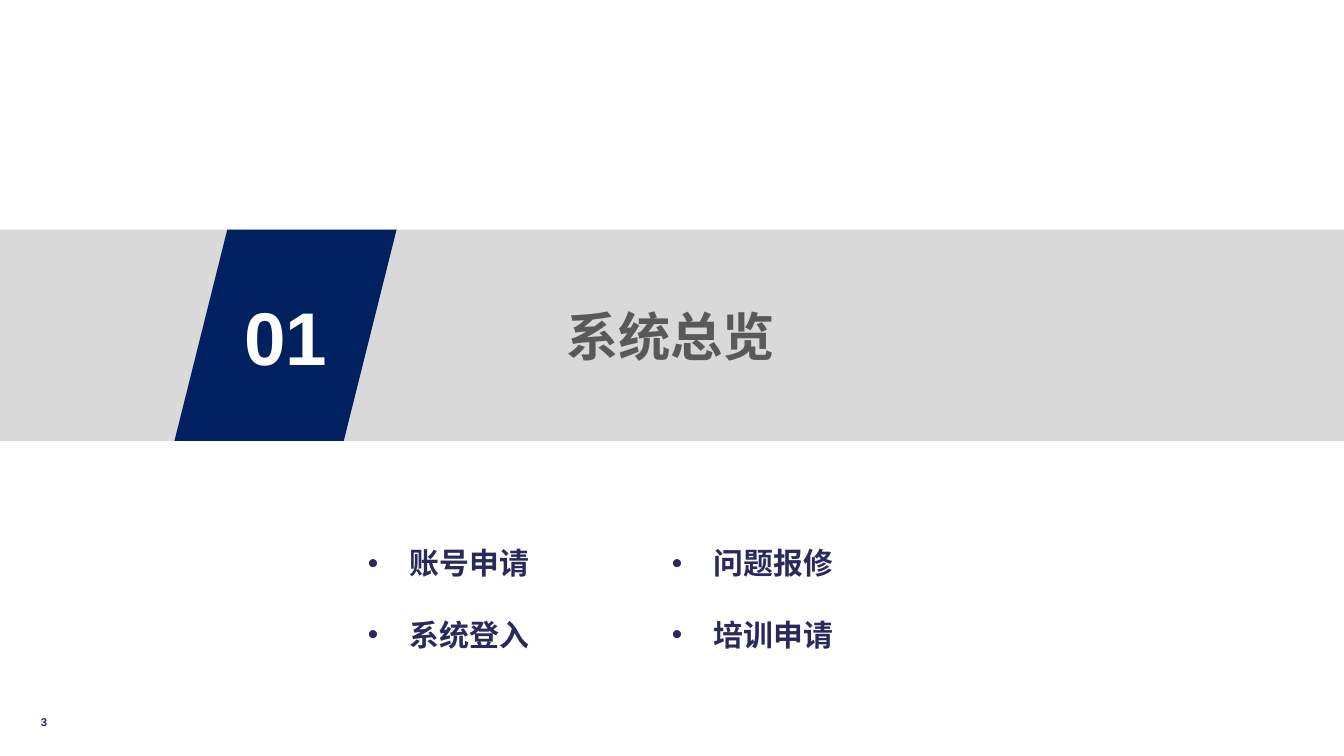
from lxml import etree
from pptx import Presentation
from pptx.dml.color import RGBColor
from pptx.enum import shapes, text
from pptx.oxml import ns
from pptx.util import Pt

NAVY, INK, GREY, BAND, WHITE = "002060", "2A295C", "595959", "D9D9D9", "FFFFFF"
MID, LOW = text.MSO_ANCHOR.MIDDLE, text.MSO_ANCHOR.BOTTOM
CENTER, RIGHT = text.PP_ALIGN.CENTER, text.PP_ALIGN.RIGHT


def tint(color, value):
    """Set a colour format from a hex string."""
    color.rgb = RGBColor.from_string(value)


def place(shape, x, y, w, h):
    """Put a shape at a box given in points."""
    shape.left, shape.top, shape.width, shape.height = map(Pt, (x, y, w, h))


def paint(shape, value):
    """Fill a shape without outline or shadow."""
    shape.fill.solid()
    tint(shape.fill.fore_color, value)
    shape.line.fill.background()


def style(par, size, color, align=None):
    """Format a paragraph and its runs in bold Arial."""
    par.alignment = align
    for run in par.runs:
        font = run.font
        font.name, font.size, font.bold = "Arial", Pt(size), True
        tint(font.color, color)


def label(shape, words, size, color, align=CENTER, anchor=MID):
    """Write one line of text in a shape."""
    frame = shape.text_frame
    frame.text = words
    frame.word_wrap = True
    frame.vertical_anchor = anchor
    style(frame.paragraphs[0], size, color, align)


def banner(slide, number, title, x, y, w, h):
    """Draw the title band with its slanted section number."""
    head = slide.shapes.title
    place(head, x, y, w, h)
    paint(head, BAND)
    label(head, title, 28, GREY)
    kind = shapes.MSO_SHAPE.PARALLELOGRAM
    badge = slide.shapes.add_shape(kind, Pt(x + 95), Pt(y), Pt(119), Pt(h))
    badge.shadow.inherit = False
    paint(badge, NAVY)
    label(badge, number, 40, WHITE)


def topics(slide, items, x, y, w, h):
    """List the topics as bullets in two columns."""
    box = slide.shapes.add_textbox(Pt(x), Pt(y), Pt(w), Pt(h))
    frame = box.text_frame
    frame.text = "\n".join(items)
    frame.word_wrap = True
    frame.auto_size = text.MSO_AUTO_SIZE.SHAPE_TO_FIT_TEXT
    frame._txBody.bodyPr.set("numCol", "2")
    for par in frame.paragraphs:
        props = par._p.get_or_add_pPr()
        props.set("marL", str(Pt(22.5)))
        props.set("indent", str(-Pt(22.5)))
        etree.SubElement(props, ns.qn("a:buFont")).set("typeface", "Arial")
        etree.SubElement(props, ns.qn("a:buChar")).set("char", "•")
        par.line_spacing = 2.0
        style(par, 16, INK)


def folio(slide, number, x, y, w, h):
    """Write the page number at the foot."""
    box = slide.shapes.add_textbox(Pt(x), Pt(y), Pt(w), Pt(h))
    frame = box.text_frame
    frame.margin_left = frame.margin_right = 0
    frame.margin_top = frame.margin_bottom = 0
    label(box, number, 6, INK, RIGHT, LOW)


def main():
    """Build the section slide."""
    deck = Presentation()
    deck.slide_width, deck.slide_height = Pt(720), Pt(405)
    slide = deck.slides.add_slide(deck.slide_layouts[5])
    banner(slide, "01", "系统总览", -1.5, 123, 721.5, 113.2)
    items = ["账号申请", "系统登入", "问题报修", "培训申请"]
    topics(slide, items, 190, 269.3, 340, 78.5)
    folio(slide, "3", 6.5, 381, 18.7, 9.4)
    deck.save("out.pptx")


if __name__ == "__main__":
    main()
